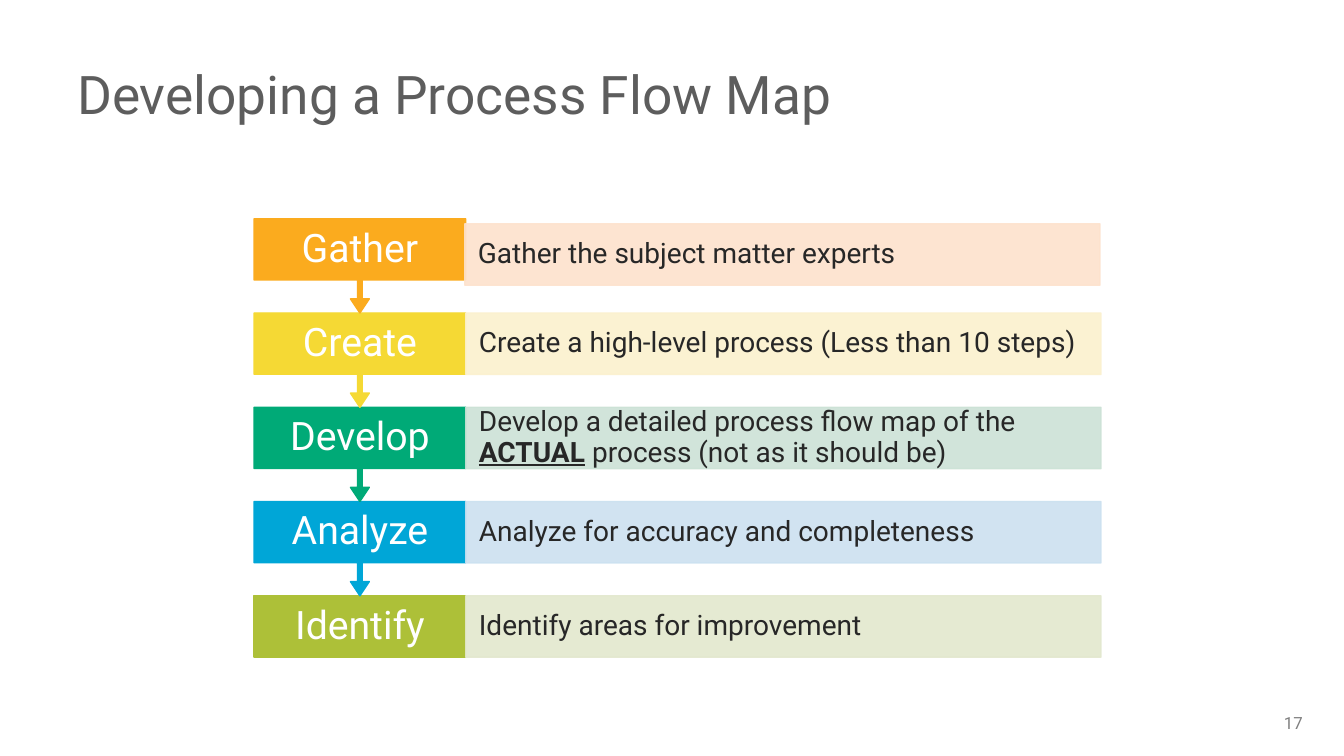
from lxml import etree
from pptx import Presentation
from pptx.dml.color import RGBColor
from pptx.enum.shapes import MSO_SHAPE
from pptx.enum.text import MSO_ANCHOR, PP_ALIGN
from pptx.oxml.ns import qn
from pptx.util import Inches, Pt

RECT, CALLOUT = MSO_SHAPE.RECTANGLE, MSO_SHAPE.DOWN_ARROW_CALLOUT
LEFT, CENTER, RIGHT = PP_ALIGN.LEFT, PP_ALIGN.CENTER, PP_ALIGN.RIGHT
TOP, MIDDLE = MSO_ANCHOR.TOP, MSO_ANCHOR.MIDDLE

FONT = "Roboto"
SLIDE_W, SLIDE_H = 13.33, 7.5
FLOW_LEFT, FLOW_TOP = 2.52, 2.17
STEP_W, DETAIL_W = 2.1, 6.3
ROW_H, ROW_PITCH = 0.61, 0.935
# Arrow shaft, head half-width, head length and box share of a step callout
CALLOUT_ADJUSTMENTS = (0.05, 0.1, 0.15, 0.65)

# Step name, step colour, detail colour, detail runs (text, emphasised), detail shift
STEPS = [
    ("Gather", "FBAB1E", "FDE2CD",
     [("Gather the subject matter experts", False)], (-0.01, 0.05)),
    ("Create", "F5D934", "FBF1CE",
     [("Create a high-level process (Less than 10 steps)", False)], (0, 0)),
    ("Develop", "00AA77", "CCE2D6",
     [("Develop a detailed process flow map of the ", False),
      ("ACTUAL", True),
      (" process (not as it should be)", False)], (0, 0)),
    ("Analyze", "00A6D7", "CCE1F0",
     [("Analyze for accuracy and completeness", False)], (0, 0)),
    ("Identify", "ADC038", "E3E8CE",
     [("Identify areas for improvement", False)], (0, 0)),
]


def rgb(color):
    return RGBColor.from_string(color)


def write(shape, runs, size, color, align=LEFT, anchor=MIDDLE,
          spacing=1.0, inset_x=0.1, inset_y=0.05):
    """Fill a shape with one paragraph of (text, emphasised) runs."""
    frame = shape.text_frame
    frame.word_wrap = True
    frame.vertical_anchor = anchor
    frame.margin_left = frame.margin_right = Inches(inset_x)
    frame.margin_top = frame.margin_bottom = Inches(inset_y)
    paragraph = frame.paragraphs[0]
    paragraph.alignment = align
    paragraph.line_spacing = spacing
    for text, emphasised in runs:
        run = paragraph.add_run()
        run.text = text
        run.font.name = FONT
        run.font.size = Pt(size)
        run.font.color.rgb = rgb(color)
        run.font.bold = run.font.underline = emphasised


def add_label(slide, text, left, top, width, height, **text_format):
    box = slide.shapes.add_textbox(*map(Inches, (left, top, width, height)))
    write(box, [(text, False)], **text_format)


def add_block(slide, kind, left, top, width, height, color, opacity=100):
    block = slide.shapes.add_shape(kind, *map(Inches, (left, top, width, height)))
    block.shadow.inherit = False
    block.fill.solid()
    block.fill.fore_color.rgb = rgb(color)
    block.line.color.rgb = rgb(color)
    block.line.width = Pt(1)
    if opacity < 100:
        for shade in block.fill._xPr.iter(qn("a:srgbClr")):
            etree.SubElement(shade, qn("a:alpha"), val=str(opacity * 1000))
    return block


def add_step(slide, row, name, step_color, detail_color, detail, shift):
    top = FLOW_TOP + row * ROW_PITCH
    is_last = row == len(STEPS) - 1
    step = add_block(slide, RECT if is_last else CALLOUT, FLOW_LEFT, top,
                     STEP_W, ROW_H if is_last else ROW_PITCH, step_color)
    if not is_last:
        for index, share in enumerate(CALLOUT_ADJUSTMENTS):
            step.adjustments[index] = share
    write(step, [(name, False)], 28, "FFFFFF", align=CENTER,
          spacing=0.9, inset_x=0.15, inset_y=0)

    shift_x, shift_y = shift
    band = add_block(slide, RECT, FLOW_LEFT + STEP_W + shift_x, top + shift_y,
                     DETAIL_W, ROW_H, detail_color, opacity=90)
    write(band, detail, 20, "272727", spacing=0.9, inset_x=0.13, inset_y=0)


def main():
    deck = Presentation()
    deck.slide_width, deck.slide_height = Inches(SLIDE_W), Inches(SLIDE_H)
    slide = deck.slides.add_slide(deck.slide_layouts[6])

    add_label(slide, "Developing a Process Flow Map",
              SLIDE_W * 0.05, SLIDE_H * 0.04, SLIDE_W * 0.9, 1.25,
              size=38, color="5D5D5D")
    add_label(slide, "17", 8.88, 7.02, 4.14, 0.4,
              size=12, color="808080", align=RIGHT, anchor=TOP)
    # Bottom row first, so that each arrow lies over the step below it
    for row, step in reversed(list(enumerate(STEPS))):
        add_step(slide, row, *step)

    deck.save("out.pptx")


if __name__ == "__main__":
    main()
